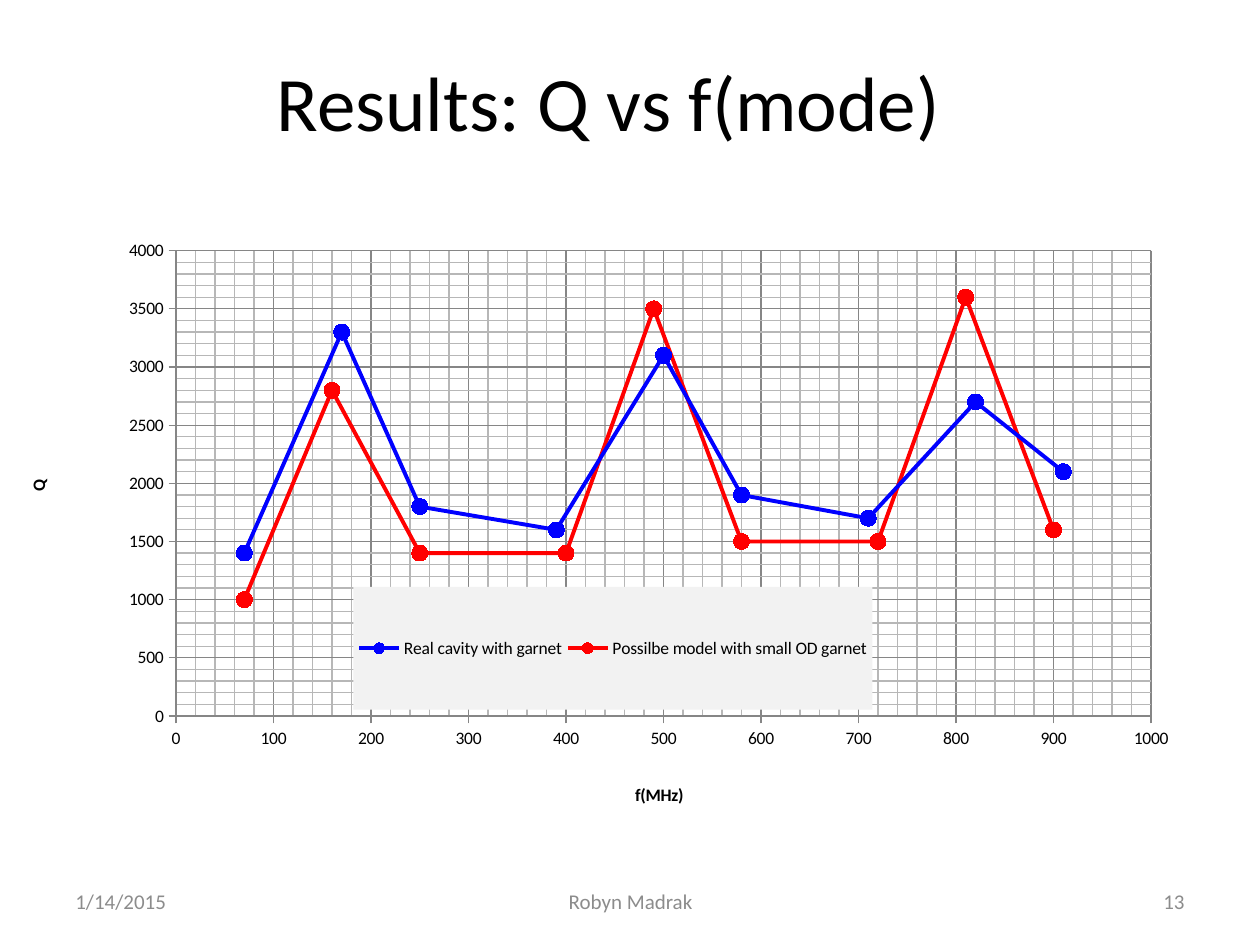
from dataclasses import dataclass

from lxml.etree import SubElement
from pptx import Presentation
from pptx.chart.data import XyChartData
from pptx.dml.color import RGBColor as RGB
from pptx.enum.chart import XL_CHART_TYPE as ChartType
from pptx.enum.chart import XL_LEGEND_POSITION as LegendPos
from pptx.enum.chart import XL_MARKER_STYLE as Marker
from pptx.enum.chart import XL_TICK_MARK as Tick
from pptx.enum.text import MSO_ANCHOR as Anchor
from pptx.enum.text import PP_ALIGN as Align
from pptx.oxml import parse_xml
from pptx.oxml.ns import nsdecls, qn
from pptx.util import Inches, Pt


@dataclass(frozen=True)
class Theme:
    font: str = "Calibri"
    ink: str = "000000"
    muted: str = "8C8C8C"
    major_grid: str = "868686"
    minor_grid: str = "B7B7B7"
    legend_fill: str = "F2F2F2"
    cavity: str = "0000FF"
    model: str = "FF0000"
    title_size: int = 44
    footer_size: int = 12
    chart_size: int = 10


def assign(target, formats):
    for key, value in formats.items():
        setattr(target, key, value)


def place(element, index, target=None, **fractions):
    """Give a chart part a manual layout in fractions of the chart."""
    for old in element.findall(qn("c:layout")):
        element.remove(old)
    layout = parse_xml(f"<c:layout {nsdecls('c')}/>")
    manual = SubElement(layout, qn("c:manualLayout"))
    settings = {"layoutTarget": target} if target else {}
    settings |= {"xMode": "edge", "yMode": "edge", **fractions}
    for tag, value in settings.items():
        SubElement(manual, qn(f"c:{tag}")).set("val", str(value))
    element.insert(index, layout)


class SlideBuilder:
    def __init__(self, slide, theme):
        self.slide = slide
        self.theme = theme

    def style_font(self, font, size, color, bold=False):
        assign(font, {"name": self.theme.font, "size": Pt(size), "bold": bold})
        font.color.rgb = RGB.from_string(color)

    def text(self, wording, box, size, color, align):
        frame = self.slide.shapes.add_textbox(*map(Inches, box)).text_frame
        assign(frame, {"word_wrap": True, "vertical_anchor": Anchor.MIDDLE})
        line = frame.paragraphs[0]
        line.alignment = align
        run = line.add_run()
        run.text = wording
        self.style_font(run.font, size, color)

    def scatter(self, box, curves):
        data = XyChartData()
        for name, _, points in curves:
            series = data.add_series(name)
            for frequency, quality in points:
                series.add_data_point(frequency, quality)
        chart = self.slide.shapes.add_chart(
            ChartType.XY_SCATTER_LINES, *map(Inches, box), data).chart
        assign(chart, {"has_title": False, "has_legend": True})
        self.style_font(chart.font, self.theme.chart_size, self.theme.ink)
        plot = chart.plots[0]
        plot.vary_by_categories = False
        for series, (_, color, _) in zip(plot.series, curves):
            self.curve(series, RGB.from_string(color))
        return chart

    def curve(self, series, color):
        series.smooth = False
        series.format.line.width = Pt(2.25)
        assign(series.marker, {"style": Marker.CIRCLE, "size": 9})
        series.marker.format.fill.solid()
        for paint in (series.format.line, series.marker.format.line,
                      series.marker.format.fill):
            color_format = paint.fore_color if hasattr(paint, "fore_color") else paint.color
            color_format.rgb = color

    def axis(self, axis, title, top, major, x, y):
        theme = self.theme
        assign(axis, {"minimum_scale": 0, "maximum_scale": top,
                      "major_unit": major, "minor_unit": major / 5,
                      "has_major_gridlines": True, "has_minor_gridlines": True,
                      "major_tick_mark": Tick.OUTSIDE,
                      "minor_tick_mark": Tick.NONE})
        # Minor gridlines have no public accessor for their format
        minor = axis.major_gridlines.format.line
        minor.color.rgb = RGB.from_string(theme.major_grid)
        minor_grid = axis._element.find(qn("c:minorGridlines"))
        minor_grid.append(parse_xml(
            f'<c:spPr {nsdecls("c", "a")}><a:ln w="9525"><a:solidFill>'
            f'<a:srgbClr val="{theme.minor_grid}"/></a:solidFill></a:ln></c:spPr>'))
        axis.format.line.color.rgb = RGB.from_string(theme.major_grid)
        axis.tick_labels.number_format = "General"
        axis.tick_labels.number_format_is_linked = False
        frame = axis.axis_title.text_frame
        frame.text = title
        self.style_font(frame.paragraphs[0].runs[0].font,
                        theme.chart_size, theme.ink, bold=True)
        place(axis.axis_title._element, 1, x=x, y=y)

    def legend(self, legend, **fractions):
        assign(legend, {"position": LegendPos.RIGHT, "include_in_layout": False})
        self.style_font(legend.font, self.theme.chart_size, self.theme.ink)
        place(legend._element, 1, **fractions)
        legend._element.find(qn("c:overlay")).addnext(parse_xml(
            f'<c:spPr {nsdecls("c", "a")}><a:solidFill>'
            f'<a:srgbClr val="{self.theme.legend_fill}"/></a:solidFill></c:spPr>'))


def main():
    theme = Theme()
    deck = Presentation()
    assign(deck, {"slide_width": Inches(10), "slide_height": Inches(7.5)})
    page = SlideBuilder(deck.slides.add_slide(deck.slide_layouts[6]), theme)

    page.text("Results: Q vs f(mode)", (0.33, 0.17, 9, 1.25),
              theme.title_size, theme.ink, Align.CENTER)
    footer = [("1/14/2015", 0.5, 2.33, Align.LEFT),
              ("Robyn Madrak", 3.42, 3.17, Align.CENTER),
              ("13", 7.17, 2.33, Align.RIGHT)]
    for wording, left, width, align in footer:
        page.text(wording, (left, 6.95, width, 0.4),
                  theme.footer_size, theme.muted, align)

    curves = [
        ("Real cavity with garnet", theme.cavity,
         [(70, 1400), (170, 3300), (250, 1800), (390, 1600), (500, 3100),
          (580, 1900), (710, 1700), (820, 2700), (910, 2100)]),
        ("Possilbe model with small OD garnet", theme.model,
         [(70, 1000), (160, 2800), (250, 1400), (400, 1400), (490, 3500),
          (580, 1500), (720, 1500), (810, 3600), (900, 1600)]),
    ]
    chart = page.scatter((-0.01, 1.58, 10.05, 5.13), curves)
    page.axis(chart.category_axis, "f(MHz)", 1000, 100, x=0.5, y=0.9)
    page.axis(chart.value_axis, "Q", 4000, 500, x=0.02, y=0.43)
    page.legend(chart.legend, x=0.28, y=0.6, w=0.41, h=0.19)
    plot_area = chart._chartSpace.chart.plotArea
    place(plot_area, 0, "inner", x=0.14, y=0.08, w=0.77, h=0.72)

    deck.save("out.pptx")


if __name__ == "__main__":
    main()
